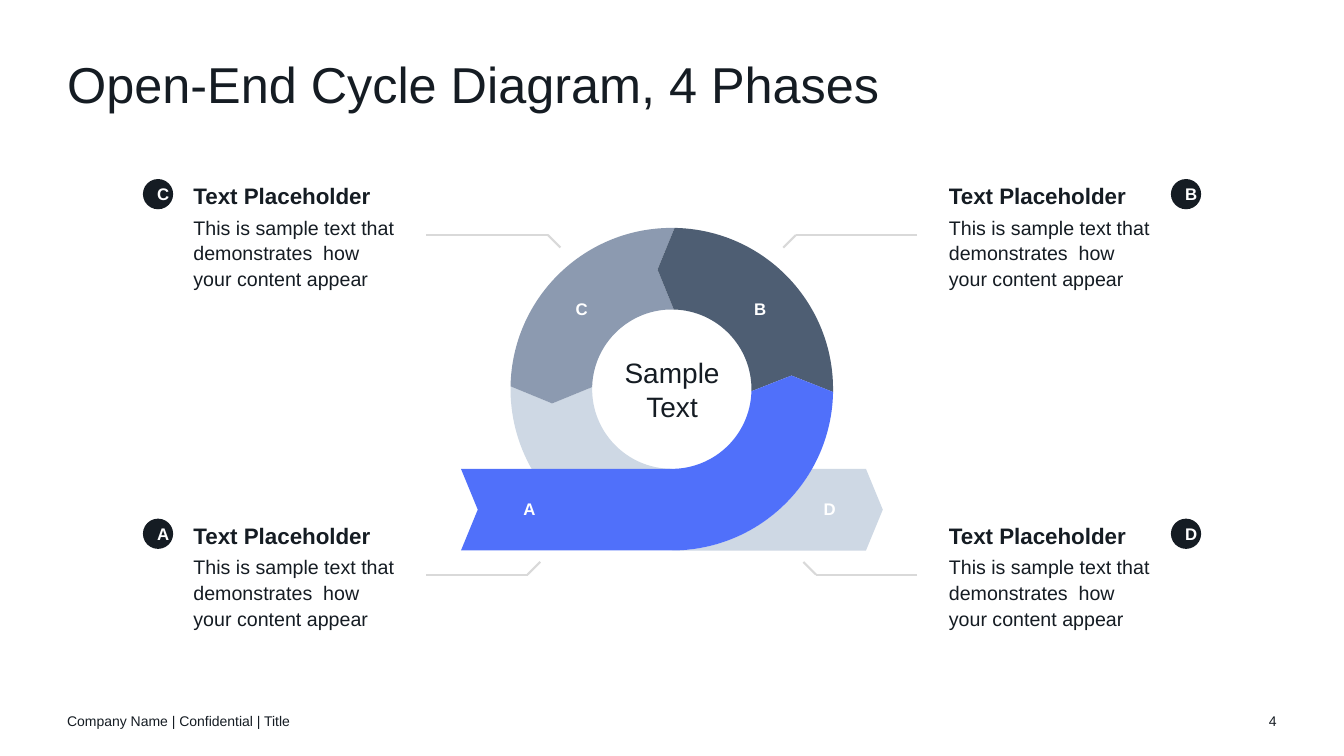
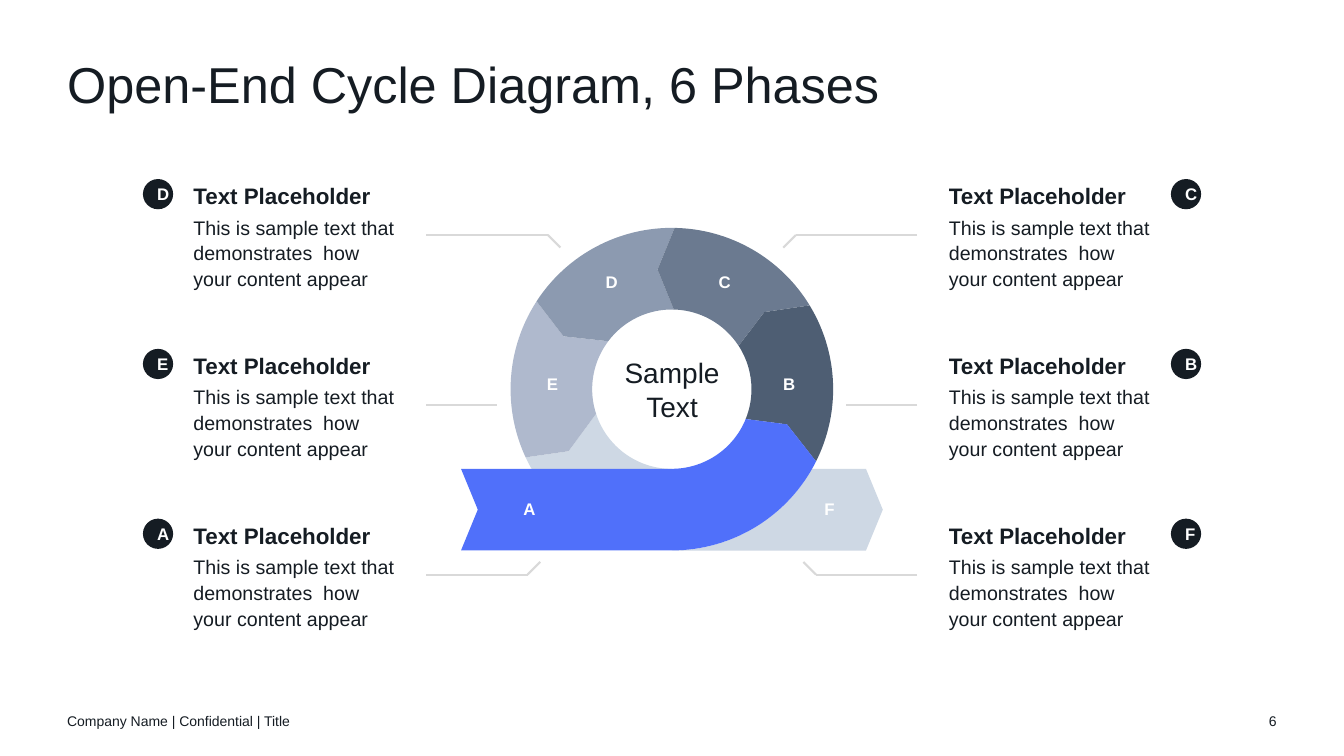
from dataclasses import dataclass
from math import asin, cos, degrees, radians, sin, tan

from lxml import etree
from pptx import Presentation
from pptx.dml.color import RGBColor
from pptx.enum.shapes import MSO_CONNECTOR as CONN, MSO_SHAPE as SHAPE
from pptx.enum.text import MSO_ANCHOR as ANCHOR, MSO_AUTO_SIZE as AUTO, PP_ALIGN as ALIGN
from pptx.oxml.ns import qn
from pptx.util import Pt


@dataclass(frozen=True)
class Theme:
    font: str = "Arial"
    ink: str = "151C23"
    white: str = "FFFFFF"
    leader: str = "D9D9D9"
    blue: str = "5070FA"
    slate: str = "4E5E73"
    steel: str = "6B7A90"
    grey: str = "8C9AB0"
    mist: str = "AFB9CD"
    pale: str = "CED8E4"
    title: int = 36
    hub: int = 20
    heading: int = 16
    body: int = 14
    letter: int = 12
    footer: int = 10


T = Theme()

# Content
FOOTER = "Company Name | Confidential | Title"
HUB_TEXT = "Sample Text"
HEADING = "Text Placeholder"
BODY = "This is sample text that demonstrates  how your content appear"
LEFT, RIGHT = 0, 1

# phases: letter, colour, label centre, callout side, callout row
# gates between phases: outer, tip and inner angle, counter-clockwise from the right
SLIDES = [
    dict(
        title="Open-End Cycle Diagram, 4 Phases", number="4",
        phases=[
            ("A", T.blue, (378.2, 363.6), LEFT, 2),
            ("B", T.slate, (543, 220.6), RIGHT, 0),
            ("C", T.grey, (415.6, 220.6), LEFT, 0),
            ("D", T.pale, (592.6, 363.6), RIGHT, 2),
        ],
        gates=[(-1, 6.5, -1.5), (89, 96.8, 88.5), (179, 186.8, 178.5)],
    ),
    dict(
        title="Open-End Cycle Diagram, 6 Phases", number="6",
        phases=[
            ("A", T.blue, (378.2, 363.6), LEFT, 2),
            ("B", T.slate, (563.7, 274.5), RIGHT, 1),
            ("C", T.steel, (517.7, 201.6), RIGHT, 0),
            ("D", T.grey, (437, 201.6), LEFT, 0),
            ("E", T.mist, (394.7, 274.5), LEFT, 1),
            ("F", T.pale, (592.6, 363.6), RIGHT, 2),
        ],
        gates=[(-26.6, -17, -22), (31.3, 39.8, 33), (89, 96.8, 88.5),
               (147, 154, 143), (205, 211, 198)],
    ),
]

# Geometry, in points
WIDTH, HEIGHT = 960, 540
CX, CY = 479.9, 278
OUTER, INNER = 115.2, 56.9
MIDDLE = (OUTER + INNER) / 2
BAND_TOP, BAND_BOTTOM = CY + INNER, CY + OUTER
BAND_LEFT, BAND_RIGHT, NOTCH = 329.3, 630.6, 12
BOTTOM = 270
BAND_ANGLE = degrees(asin(INNER / OUTER))  # where the ring's edge meets the band's top
BADGE = 21.6
BADGE_X = (102.1, 836.4)
TEXT_X = (138.2, 677.8)
ROW_TOP, ROW_STEP = 127.9, 121.3
LEADER_X, LEADER_DROP, BEND = 304.6, 39.9, 9
LEADERS = [(86.7, 1), (50.7, 0), (72.3, -1)]  # length and bend direction by row


def rgb(value):
    return RGBColor.from_string(value)


def style(p, size, color=T.ink, bold=False, align=ALIGN.LEFT):
    p.alignment = align
    for r in p.runs:
        r.font.name, r.font.size, r.font.bold = T.font, Pt(size), bold
        r.font.color.rgb = rgb(color)


def clear_frame(tf, anchor=ANCHOR.MIDDLE):
    tf.margin_left = tf.margin_right = tf.margin_top = tf.margin_bottom = 0
    tf.word_wrap, tf.auto_size, tf.vertical_anchor = True, AUTO.NONE, anchor


def textbox(s, box, text, size, **look):
    tf = s.shapes.add_textbox(*map(Pt, box)).text_frame
    clear_frame(tf)
    tf.text = text
    for p in tf.paragraphs:
        style(p, size, **look)
    return tf


def paint(sp, color):
    sp.shadow.inherit = False
    sp.fill.solid()
    sp.fill.fore_color.rgb = rgb(color)
    sp.line.fill.background()


def outline(s, steps, color):
    """Closed shape; a step of one point is a line, of three points a curve."""
    (start,), *rest = [[(Pt(x), Pt(y)) for x, y in step] for step in steps]
    builder = s.shapes.build_freeform(*start)
    builder.add_line_segments([pt for step in rest for pt in step], close=True)
    sp = builder.convert_to_shape()
    lines = iter(list(sp._element.iter(qn("a:lnTo"))))
    for step in rest:
        first, *others = [next(lines) for _ in step]
        if others:
            first.tag = qn("a:cubicBezTo")
            for ln in others:
                first.append(ln[0])
                ln.getparent().remove(ln)
    paint(sp, color)


def line(s, x1, y1, x2, y2):
    cn = s.shapes.add_connector(CONN.STRAIGHT, *map(Pt, (x1, y1, x2, y2)))
    cn.line.color.rgb, cn.line.width = rgb(T.leader), Pt(1.5)
    etree.SubElement(cn._element.spPr, qn("a:effectLst"))


def polar(radius, angle):
    return CX + radius * cos(radians(angle)), CY - radius * sin(radians(angle))


def arc(radius, start, end):
    """Start point, then curves that break at the quarter points."""
    low, high = sorted((start, end))
    quarters = [a for a in range(-90, 271, 90) if low + 3 < a < high - 3]
    stops = [start] + sorted(quarters, reverse=start > end) + [end]
    steps = [[polar(radius, start)]]
    for a, b in zip(stops, stops[1:]):
        reach = radius * 4 / 3 * tan(radians(b - a) / 4)
        (x1, y1), (x2, y2) = polar(radius, a), polar(radius, b)
        a, b = radians(a), radians(b)
        steps.append([(x1 - reach * sin(a), y1 - reach * cos(a)),
                      (x2 + reach * sin(b), y2 + reach * cos(b)), (x2, y2)])
    return steps


def segment(start, end):
    """Ring piece between two gates; without an end gate it runs to the band."""
    out_end, tip_end, in_end = end or (180 + BAND_ANGLE, None, BOTTOM)
    tip = [[polar(MIDDLE, tip_end)]] if end else []
    return (arc(OUTER, start[0], out_end) + tip
            + arc(INNER, in_end, start[2]) + [[polar(MIDDLE, start[1])]])


def draw_cycle(s, phases, gates):
    # Exit arrow
    band_middle = (BAND_TOP + BAND_BOTTOM) / 2
    exit_tip = [(BAND_RIGHT - NOTCH, BAND_TOP), (BAND_RIGHT, band_middle),
                (BAND_RIGHT - NOTCH, BAND_BOTTOM)]
    outline(s, arc(OUTER, BOTTOM - 360, -BAND_ANGLE) + [[pt] for pt in exit_tip],
            phases[-1][1])

    # Ring pieces, then the entry band that curls into the ring
    ends = gates[1:] + [None]
    for (_, color, *_), start, end in reversed(list(zip(phases[1:], gates, ends))):
        outline(s, segment(start, end), color)
    out, tip, inn = gates[0]
    entry = [(BAND_LEFT, BAND_BOTTOM), (BAND_LEFT + NOTCH, band_middle),
             (BAND_LEFT, BAND_TOP)]
    outline(s, [[pt] for pt in entry] + arc(INNER, BOTTOM - 360, inn)
            + [[polar(MIDDLE, tip)]] + arc(OUTER, out, BOTTOM - 360), phases[0][1])

    for letter, _, (x, y), *_ in phases:
        textbox(s, (x - BADGE / 2, y - BADGE / 2, BADGE, BADGE), letter, T.letter,
                color=T.white, bold=True, align=ALIGN.CENTER)
    textbox(s, (440.5, 238.3, 79.2, 79.2), HUB_TEXT, T.hub, align=ALIGN.CENTER)


def draw_callout(s, letter, side, row):
    top = ROW_TOP + row * ROW_STEP
    badge = s.shapes.add_shape(SHAPE.OVAL, *map(Pt, (BADGE_X[side], top, BADGE, BADGE)))
    paint(badge, T.ink)
    badge.text_frame.text = letter
    style(badge.text_frame.paragraphs[0], T.letter, T.white, True, ALIGN.CENTER)

    tf = textbox(s, (TEXT_X[side], top, 144, 79.9), f"{HEADING}\n{BODY}", T.body)
    tf.auto_size = AUTO.SHAPE_TO_FIT_TEXT
    style(tf.paragraphs[0], T.heading, bold=True)
    for p in tf.paragraphs:
        p.line_spacing, p.space_after = 1.1, Pt(3)

    # Leader, mirrored for the right side
    length, bend = LEADERS[row]
    way = 1 if side == LEFT else -1
    x = LEADER_X if side == LEFT else 2 * CX - LEADER_X
    y, elbow = top + LEADER_DROP, x + way * length
    line(s, x, y, elbow, y)
    if bend:
        line(s, elbow, y, elbow + way * BEND, y + bend * BEND)


def draw_frame(s, title, number):
    sp = s.shapes.title
    sp.left, sp.top, sp.width, sp.height = map(Pt, (48, 42.8, 864, 43.2))
    clear_frame(sp.text_frame, ANCHOR.TOP)
    sp.text_frame.text = title
    p = sp.text_frame.paragraphs[0]
    style(p, T.title)
    p.line_spacing = 0.9
    textbox(s, (48, 500.4, 324, 28.8), FOOTER, T.footer)
    textbox(s, (876, 500.4, 36, 28.8), number, T.footer, align=ALIGN.RIGHT)


def main():
    prs = Presentation()
    prs.slide_width, prs.slide_height = Pt(WIDTH), Pt(HEIGHT)
    title_only = prs.slide_layouts[5]
    for data in SLIDES:
        s = prs.slides.add_slide(title_only)
        draw_frame(s, data["title"], data["number"])
        draw_cycle(s, data["phases"], data["gates"])
        for letter, _, _, side, row in data["phases"]:
            draw_callout(s, letter, side, row)
    prs.save("out.pptx")


if __name__ == "__main__":
    main()
